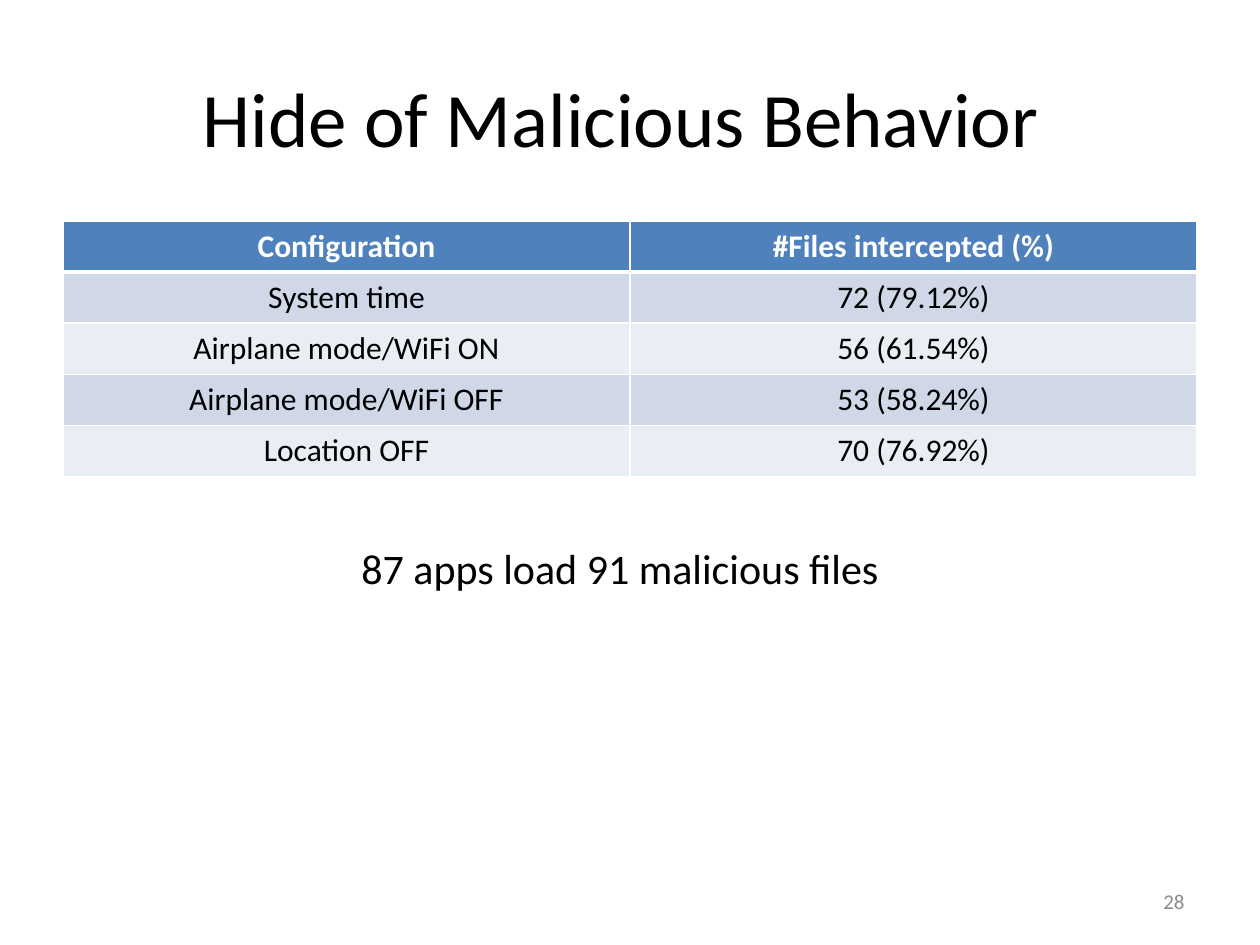
"""Build the slide on hiding malicious behavior."""
from dataclasses import dataclass

import lxml.etree
import pptx
import pptx.dml.color
import pptx.enum.text
import pptx.oxml.ns
import pptx.util

EMU_PER_PX = 914400 / 126
FONT = "Calibri"
ALIGN = pptx.enum.text.PP_ALIGN
ANCHOR = pptx.enum.text.MSO_ANCHOR


@dataclass(frozen=True)
class Label:
    """A line of text with its box in px and its look."""
    text: str
    left: int
    top: int
    width: int
    height: int
    size: int
    color: str
    align: ALIGN = ALIGN.CENTER
    anchor: ANCHOR = ANCHOR.MIDDLE
    wrap: bool = True


@dataclass(frozen=True)
class RowStyle:
    """The look of one table row, with border widths in points."""
    fill: str
    color: str
    bold: bool
    top_border: int
    bottom_border: int


LABELS = (
    Label("Hide of Malicious Behavior ", 63, 38, 1134, 157, 44, "000000"),
    Label("28", 903, 876, 294, 50, 12, "8C8C8C", ALIGN.RIGHT),
    Label("87 apps load 91 malicious files", 346, 536, 548, 63, 24, "000000",
          anchor=ANCHOR.TOP, wrap=False),
)
ROWS = (
    ("Configuration", "#Files intercepted (%)"),
    ("System time", "72 (79.12%)"),
    ("Airplane mode/WiFi ON", "56 (61.54%)"),
    ("Airplane mode/WiFi OFF", "53 (58.24%)"),
    ("Location OFF", "70 (76.92%)"),
)
TABLE_LEFT, TABLE_TOP, COLUMN_WIDTH, ROW_HEIGHT = 63, 221, 567, 51


def px(length: int) -> pptx.util.Emu:
    """Turn px into EMU."""
    return pptx.util.Emu(round(length * EMU_PER_PX))


def rgb(value: str) -> pptx.dml.color.RGBColor:
    """Turn a hex string into a colour."""
    return pptx.dml.color.RGBColor.from_string(value)


def write(paragraph, text: str, size: int, color: str, align: ALIGN, bold: bool = False) -> None:
    """Add one styled run to an aligned paragraph."""
    paragraph.alignment = align
    run = paragraph.add_run()
    run.text = text
    run.font.name = FONT
    run.font.size = pptx.util.Pt(size)
    run.font.bold = bold
    run.font.color.rgb = rgb(color)


def add_label(slide, label: Label) -> None:
    """Draw a label as a text box."""
    box = slide.shapes.add_textbox(px(label.left), px(label.top), px(label.width), px(label.height))
    frame = box.text_frame
    frame.word_wrap = label.wrap
    frame.vertical_anchor = label.anchor
    write(frame.paragraphs[0], label.text, label.size, label.color, label.align)


def add_border(cell, side: str, points: int) -> None:
    """Give one side of a cell a white border."""
    qn = pptx.oxml.ns.qn
    line = lxml.etree.SubElement(cell._tc.get_or_add_tcPr(), qn(f"a:ln{side}"),
                                 w=str(pptx.util.Pt(points)))
    fill = lxml.etree.SubElement(line, qn("a:solidFill"))
    lxml.etree.SubElement(fill, qn("a:srgbClr"), val="FFFFFF")


def row_style(index: int) -> RowStyle:
    """Choose the header look or the banded body look."""
    if index == 0:
        return RowStyle("4F81BD", "FFFFFF", True, 1, 3)
    return RowStyle("D0D8E8" if index % 2 else "E9EDF4", "000000", False, 3 if index == 1 else 1, 1)


def add_interception_table(slide) -> None:
    """Draw the table of intercepted files by configuration."""
    columns = len(ROWS[0])
    table = slide.shapes.add_table(len(ROWS), columns, px(TABLE_LEFT), px(TABLE_TOP),
                                   px(COLUMN_WIDTH * columns), px(ROW_HEIGHT * len(ROWS))).table
    for index, texts in enumerate(ROWS):
        table.rows[index].height = px(ROW_HEIGHT)
        style = row_style(index)
        borders = {"L": 1, "R": 1, "T": style.top_border, "B": style.bottom_border}
        for cell, text in zip(table.rows[index].cells, texts):
            for side, points in borders.items():
                add_border(cell, side, points)
            cell.fill.solid()
            cell.fill.fore_color.rgb = rgb(style.fill)
            write(cell.text_frame.paragraphs[0], text, 18, style.color, ALIGN.CENTER, style.bold)


def main() -> None:
    """Build and save the slide."""
    deck = pptx.Presentation()
    deck.slide_width, deck.slide_height = px(1260), px(945)
    slide = deck.slides.add_slide(deck.slide_layouts[6])
    add_interception_table(slide)
    for label in LABELS:
        add_label(slide, label)
    deck.save("out.pptx")


if __name__ == "__main__":
    main()
